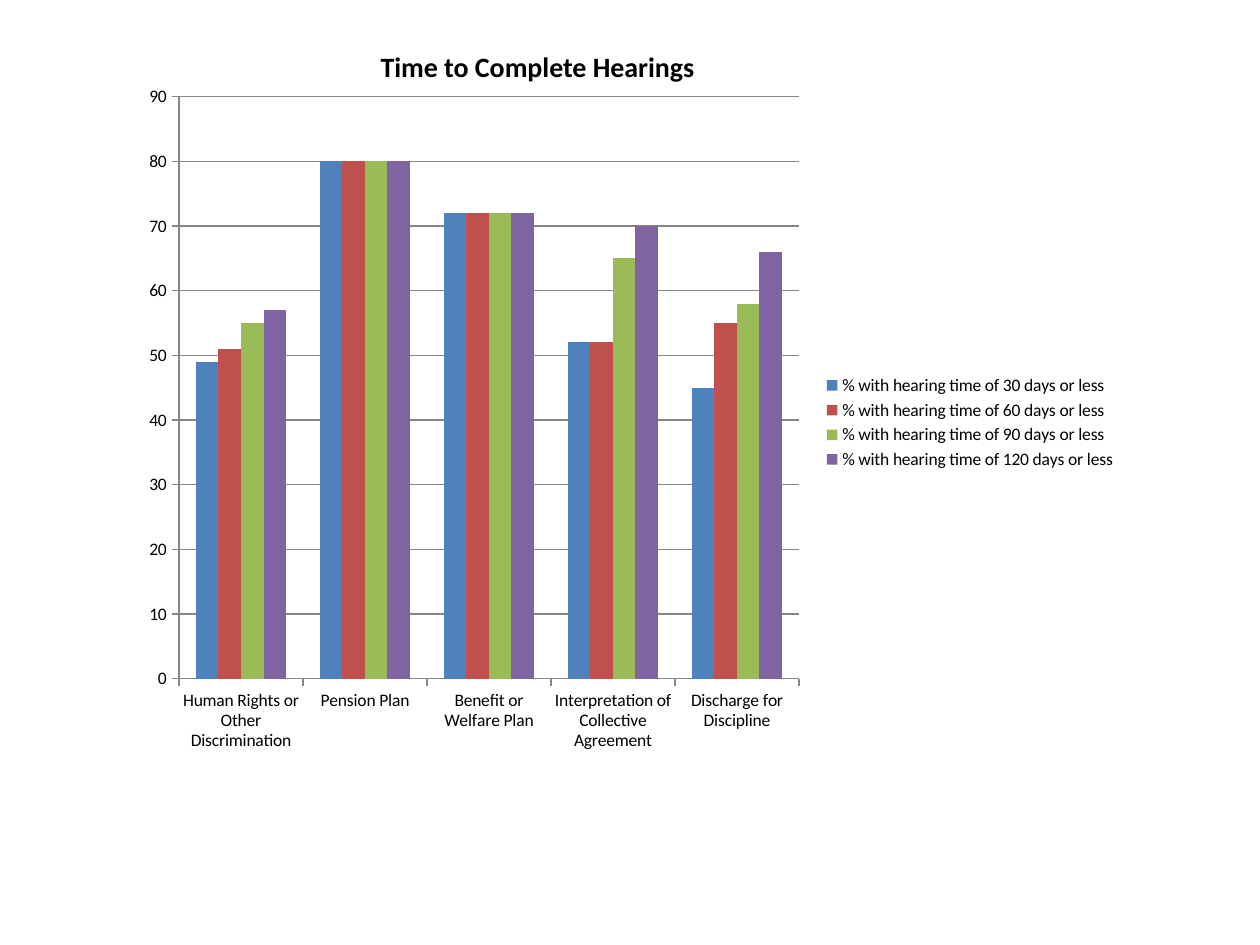
import typing

import lxml.etree
import pptx
import pptx.chart.data
import pptx.dml.color
import pptx.enum.chart
import pptx.enum.text
import pptx.oxml.ns
import pptx.util

PX = 914400 / 126
BLACK = pptx.dml.color.RGBColor(0x00, 0x00, 0x00)
GREY = pptx.dml.color.RGBColor(0x86, 0x86, 0x86)
BLUE = pptx.dml.color.RGBColor(0x4F, 0x81, 0xBD)
RED = pptx.dml.color.RGBColor(0xC0, 0x50, 0x4D)
GREEN = pptx.dml.color.RGBColor(0x9B, 0xBB, 0x59)
PURPLE = pptx.dml.color.RGBColor(0x80, 0x64, 0xA2)
FONT = "Calibri"


class HearingTime(typing.NamedTuple):
    days: int
    percentages: tuple[int, ...]
    color: pptx.dml.color.RGBColor


CASE_TYPES = (
    "Human Rights or Other Discrimination",
    "Pension Plan",
    "Benefit or Welfare Plan",
    "Interpretation of Collective Agreement",
    "Discharge for Discipline",
)
HEARING_TIMES = (
    HearingTime(30, (49, 80, 72, 52, 45), BLUE),
    HearingTime(60, (51, 80, 72, 52, 55), RED),
    HearingTime(90, (55, 80, 72, 65, 58), GREEN),
    HearingTime(120, (57, 80, 72, 70, 66), PURPLE),
)


def px(length: int) -> int:
    return round(length * PX)


def add_title(slide) -> None:
    title = slide.shapes.title
    title.left, title.top, title.width, title.height = map(px, (368, 43, 378, 47))
    frame = title.text_frame
    frame.text = "Time to Complete Hearings"
    frame.word_wrap = True
    frame.auto_size = pptx.enum.text.MSO_AUTO_SIZE.SHAPE_TO_FIT_TEXT
    frame.vertical_anchor = pptx.enum.text.MSO_ANCHOR.TOP
    heading = frame.paragraphs[0]
    heading.alignment = pptx.enum.text.PP_ALIGN.LEFT
    heading.font.name = FONT
    heading.font.size = pptx.util.Pt(16)
    heading.font.bold = True
    heading.font.color.rgb = BLACK


def style_line(line) -> None:
    line.color.rgb = GREY
    line.width = pptx.util.Pt(0.75)


def place_plot(chart, **fractions: float) -> None:
    """Fix the inner plot area, given as fractions of the chart."""
    qn = pptx.oxml.ns.qn
    plot_area = chart.plots[0]._element.getparent()
    for old in plot_area.findall(qn("c:layout")):
        plot_area.remove(old)
    layout = lxml.etree.Element(qn("c:layout"))
    plot_area.insert(0, layout)
    manual = lxml.etree.SubElement(layout, qn("c:manualLayout"))
    settings = {"layoutTarget": "inner", "xMode": "edge", "yMode": "edge", **fractions}
    for name, value in settings.items():
        lxml.etree.SubElement(manual, qn(f"c:{name}")).set("val", str(value))


def add_hearings_chart(slide) -> None:
    data = pptx.chart.data.CategoryChartData()
    data.categories = CASE_TYPES
    for hearing in HEARING_TIMES:
        data.add_series(
            f"% with hearing time of {hearing.days} days or less", hearing.percentages
        )
    chart = slide.shapes.add_chart(
        pptx.enum.chart.XL_CHART_TYPE.COLUMN_CLUSTERED,
        *map(px, (129, 76, 1000, 693)),
        data,
    ).chart
    chart.has_title = False
    chart.font.name = FONT
    chart.font.size = pptx.util.Pt(10)
    chart.font.color.rgb = BLACK

    # Columns
    columns = chart.plots[0]
    columns.gap_width = 150
    columns.overlap = 0
    columns.vary_by_categories = False
    for series, hearing in zip(columns.series, HEARING_TIMES):
        series.format.fill.solid()
        series.format.fill.fore_color.rgb = hearing.color
    place_plot(chart, x=0.05, y=0.03, w=0.62, h=0.84)

    # Axes and gridlines
    for axis in (chart.category_axis, chart.value_axis):
        axis.major_tick_mark = pptx.enum.chart.XL_TICK_MARK.OUTSIDE
        axis.minor_tick_mark = pptx.enum.chart.XL_TICK_MARK.NONE
        style_line(axis.format.line)
    percent = chart.value_axis
    percent.minimum_scale, percent.maximum_scale, percent.major_unit = 0, 90, 10
    percent.has_major_gridlines = True
    style_line(percent.major_gridlines.format.line)

    # Legend
    chart.has_legend = True
    chart.legend.position = pptx.enum.chart.XL_LEGEND_POSITION.RIGHT
    chart.legend.include_in_layout = False


def main() -> None:
    deck = pptx.Presentation()
    deck.slide_width, deck.slide_height = px(1260), px(945)
    slide = deck.slides.add_slide(deck.slide_layouts.get_by_name("Title Only"))
    add_hearings_chart(slide)
    add_title(slide)
    deck.save("out.pptx")


if __name__ == "__main__":
    main()
